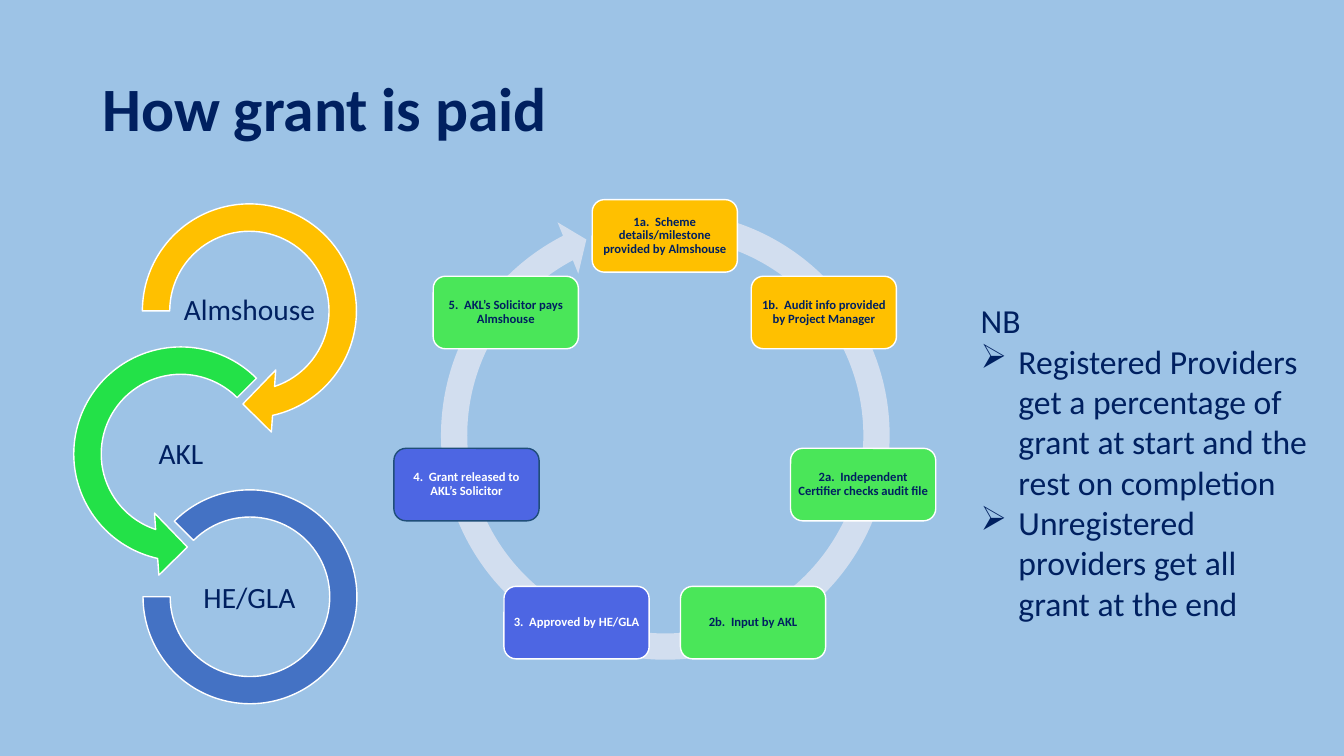
from math import cos, pi, sin

from lxml import etree
from pptx import Presentation
from pptx.dml.color import RGBColor
from pptx.enum.shapes import MSO_SHAPE
from pptx.enum.text import MSO_ANCHOR, PP_ALIGN
from pptx.oxml.ns import qn
from pptx.util import Pt

CIRCLE_ARROW = MSO_SHAPE.CIRCULAR_ARROW
LEFT_ARROW = MSO_SHAPE.LEFT_CIRCULAR_ARROW
BLOCK_ARC = MSO_SHAPE.BLOCK_ARC
ROUNDED = MSO_SHAPE.ROUNDED_RECTANGLE
MIDDLE = MSO_ANCHOR.MIDDLE
TOP = MSO_ANCHOR.TOP
CENTER = PP_ALIGN.CENTER
LEFT = PP_ALIGN.LEFT

NAVY, WHITE, GOLD, GREEN, BLUE = "002060", "FFFFFF", "FFC000", "4AE659", "4D66E3"


def color(value):
    return RGBColor.from_string(value)


def write(box, lines, size, ink=NAVY, bold=False, align=CENTER, anchor=MIDDLE,
          inset=None, spacing=0.9, bullet=None):
    frame = box.text_frame
    frame.word_wrap = True
    frame.vertical_anchor = anchor
    if inset is not None:
        frame.margin_left = frame.margin_right = Pt(inset)
        frame.margin_top = frame.margin_bottom = Pt(inset)
    for index, line in enumerate(lines):
        para = frame.paragraphs[0] if index == 0 else frame.add_paragraph()
        para.alignment = align
        para.line_spacing = spacing
        if bullet and index > 0:
            properties = para._p.get_or_add_pPr()
            properties.set("marL", str(Pt(27)))
            properties.set("indent", str(Pt(-27)))
            etree.SubElement(properties, qn("a:buFont"), typeface="Wingdings")
            etree.SubElement(properties, qn("a:buChar"), char=bullet)
        span = para.add_run()
        span.text = line
        span.font.name = "Calibri"
        span.font.size = Pt(size)
        span.font.bold = bold
        span.font.color.rgb = color(ink)


deck = Presentation()
deck.slide_width, deck.slide_height = Pt(960), Pt(540)
page = deck.slides.add_slide(deck.slide_layouts[6])
page.background.fill.solid()
page.background.fill.fore_color.rgb = color("9DC3E6")

title = page.shapes.add_textbox(Pt(66), Pt(27.5), Pt(828), Pt(104.4))
write(title, ["How grant is paid"], 44, bold=True, align=LEFT)

arcs = [
    (CIRCLE_ARROW, 304.6, 140.4, 341.3, (0.055, 3.307, 145.525, 169.292, 0.058), "D2DEEF", None),
    (CIRCLE_ARROW, 89.3, 133.2, 177.8, (0.11, 11.423, 45, 108, 0.125), GOLD, WHITE),
    (LEFT_ARROW, 40.3, 235.4, 177.8, (0.11, 11.423, 63, 189, 0.125), "23E148", WHITE),
    (BLOCK_ARC, 102.2, 349.9, 152.8, (135, 108, 0.127), "4472C4", WHITE),
]
for preset, left, top, size, adjustments, fill, line in arcs:
    arc = page.shapes.add_shape(preset, Pt(left), Pt(top), Pt(size), Pt(size))
    arc.shadow.inherit = False
    for index, value in enumerate(adjustments):
        arc.adjustments[index] = value
    arc.fill.solid()
    arc.fill.fore_color.rgb = color(fill)
    if line:
        arc.line.color.rgb = color(line)
        arc.line.width = Pt(1)
    else:
        arc.line.fill.background()

parties = [("Almshouse", 128.9, 197.3), ("AKL", 79.9, 300.2), ("HE/GLA", 128.9, 403.2)]
for name, left, top in parties:
    label = page.shapes.add_textbox(Pt(left), Pt(top), Pt(98.6), Pt(49.7))
    write(label, [name], 21, inset=1)

steps = [
    ("1a.  Scheme details/milestone provided by Almshouse", GOLD, WHITE, NAVY),
    ("1b.  Audit info provided by Project Manager", GOLD, WHITE, NAVY),
    ("2a.  Independent Certifier checks audit file", GREEN, WHITE, NAVY),
    ("2b.  Input by AKL", GREEN, WHITE, NAVY),
    ("3.  Approved by HE/GLA", BLUE, WHITE, WHITE),
    ("4.  Grant released to AKL’s Solicitor", BLUE, "1F4E79", WHITE),
    ("5.  AKL’s Solicitor pays Almshouse", GREEN, WHITE, NAVY),
]
center_x, center_y, radius = 474.9, 313.8, 145.3
step_width, step_height = 103.7, 51.8
for index, (text, fill, line, ink) in enumerate(steps):
    angle = 2 * pi * index / len(steps)
    left = center_x + radius * sin(angle) - step_width / 2
    top = center_y - radius * cos(angle) - step_height / 2
    step = page.shapes.add_shape(ROUNDED, Pt(left), Pt(top), Pt(step_width), Pt(step_height))
    step.shadow.inherit = False
    step.fill.solid()
    step.fill.fore_color.rgb = color(fill)
    step.line.color.rgb = color(line)
    step.line.width = Pt(1)
    write(step, [text], 9, ink=ink, bold=True, inset=2.7)

note = page.shapes.add_textbox(Pt(693.4), Pt(211), Pt(249.8), Pt(239.8))
write(note, [
    "NB",
    "Registered Providers get a percentage of grant at start and the rest on completion",
    "Unregistered providers get all grant at the end",
], 24, align=LEFT, anchor=TOP, spacing=1.0, bullet="Ø")

deck.save("out.pptx")
